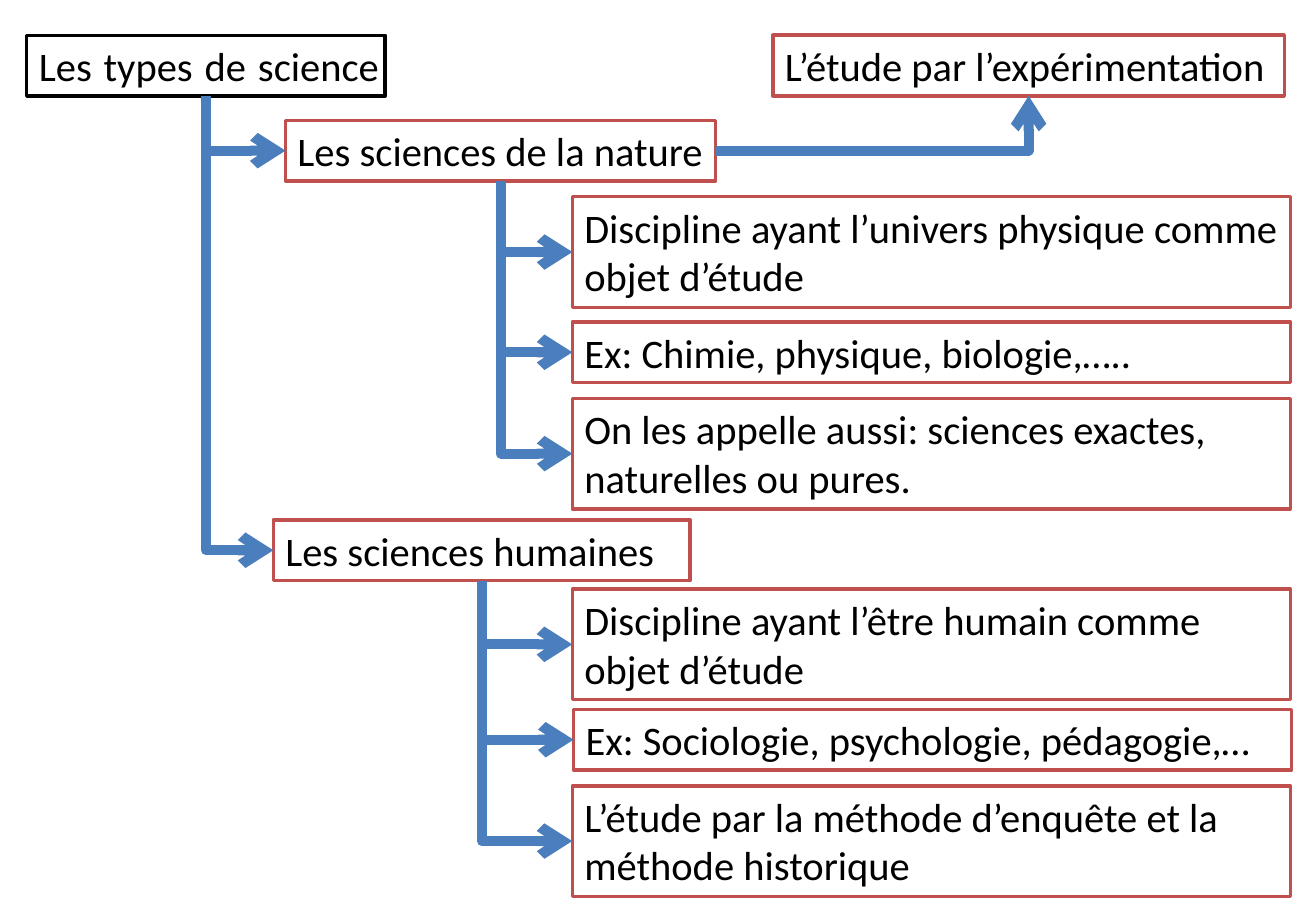
import dataclasses
import pptx
import pptx.util
import pptx.dml.color
import pptx.enum.shapes
import pptx.enum.text
import pptx.oxml
import pptx.oxml.ns

Inches = pptx.util.Inches
Pt = pptx.util.Pt
BOTTOM, LEFT, RIGHT = 2, 1, 3
ONE, TWO = 0.5, 0.91  # box heights for one and two lines


@dataclasses.dataclass(frozen=True)
class Theme:
    font: str = "Calibri"
    size: int = 24
    ink: str = "000000"
    paper: str = "FFFFFF"
    frame: str = "C0504D"
    arrow: str = "4B7EBC"
    border: float = 2
    stroke: float = 6


THEME = Theme()


def color(code):
    return pptx.dml.color.RGBColor.from_string(code)


def style(box, text, edge, align):
    """Frame a box and write its text."""
    box.fill.solid()
    box.fill.fore_color.rgb = color(THEME.paper)
    box.line.color.rgb = color(edge)
    box.line.width = Pt(THEME.border)
    frame = box.text_frame
    frame.word_wrap = True
    frame.auto_size = pptx.enum.text.MSO_AUTO_SIZE.NONE
    frame.vertical_anchor = pptx.enum.text.MSO_ANCHOR.TOP
    frame.margin_left = Inches(0.1)
    frame.margin_right = frame.margin_top = frame.margin_bottom = Inches(0.05)
    para = frame.paragraphs[0]
    para.alignment = align
    run = para.add_run()
    run.text = text
    run.font.name = THEME.font
    run.font.size = Pt(THEME.size)
    run.font.color.rgb = color(THEME.ink)


def add_title(slide, text, x, y, w, h):
    box = slide.shapes.title
    box.left, box.top, box.width, box.height = map(Inches, (x, y, w, h))
    style(box, text, THEME.ink, pptx.enum.text.PP_ALIGN.JUSTIFY)
    return box


def add_box(slide, text, x, y, w, h):
    box = slide.shapes.add_textbox(*map(Inches, (x, y, w, h)))
    style(box, text, THEME.frame, pptx.enum.text.PP_ALIGN.LEFT)
    return box


def add_bend(slide, start, out, end, into):
    """Join two boxes with an arrow that has a single corner."""
    link = slide.shapes.add_connector(
        pptx.enum.shapes.MSO_CONNECTOR.ELBOW, 0, 0, 0, 0)
    link.begin_connect(start, out)
    link.end_connect(end, into)
    x, y = link.begin_x, link.begin_y
    w, h = link.end_x - x, link.end_y - y
    qn = pptx.oxml.ns.qn
    props = link._element.spPr
    props.find(qn("a:prstGeom")).set("prst", "bentConnector2")
    xfrm = props.find(qn("a:xfrm"))
    xfrm.attrib.clear()
    if out == BOTTOM:  # down, then right
        xfrm.set("rot", "16200000")
        xfrm.set("flipH", "1")
        link.left, link.top = x + (w - h) // 2, y + (h - w) // 2
        link.width, link.height = h, w
    else:  # right, then up
        xfrm.set("flipV", "1")
        link.left, link.top, link.width, link.height = x, y + h, w, -h
    link.line.color.rgb = color(THEME.arrow)
    link.line.width = Pt(THEME.stroke)
    line = props.find(qn("a:ln"))
    line.append(pptx.oxml.parse_xml(
        '<a:tailEnd %s type="arrow"/>' % pptx.oxml.ns.nsdecls("a")))
    props.append(pptx.oxml.parse_xml(
        "<a:effectLst %s/>" % pptx.oxml.ns.nsdecls("a")))


def add_branch(slide, root, head, leaves):
    """Hang a branch on the root, and its details on the branch."""
    top = add_box(slide, *head)
    add_bend(slide, root, BOTTOM, top, LEFT)
    for text, x, y, h in leaves:
        leaf = add_box(slide, text, x, y, 5.91, h)
        add_bend(slide, top, BOTTOM, leaf, LEFT)
    return top


def main():
    deck = pptx.Presentation()
    deck.slide_width, deck.slide_height = Inches(10.83), Inches(7.5)
    slide = deck.slides.add_slide(deck.slide_layouts.get_by_name("Title Only"))

    # Root
    root = add_title(slide, "Les types de science ", 0.22, 0.29, 2.95, ONE)

    # Natural sciences
    nature = add_branch(
        slide, root, ("Les sciences de la nature", 2.35, 0.99, 3.54, ONE), [
            ("Discipline ayant l’univers physique comme objet d’étude",
             4.71, 1.62, TWO),
            ("Ex: Chimie, physique, biologie,…..", 4.71, 2.65, ONE),
            ("On les appelle aussi: sciences exactes, naturelles ou pures.",
             4.71, 3.28, TWO),
        ])
    trial = add_box(slide, "L’étude par l’expérimentation",
                    6.36, 0.29, 4.21, ONE)
    add_bend(slide, nature, RIGHT, trial, BOTTOM)

    # Human sciences
    add_branch(
        slide, root, ("Les sciences humaines", 2.25, 4.28, 3.43, ONE), [
            ("Discipline ayant l’être humain comme objet d’étude",
             4.71, 4.85, TWO),
            ("Ex: Sociologie, psychologie, pédagogie,…", 4.72, 5.84, ONE),
            ("L’étude par la méthode d’enquête et la méthode historique",
             4.71, 6.47, TWO),
        ])

    deck.save("out.pptx")


if __name__ == "__main__":
    main()
